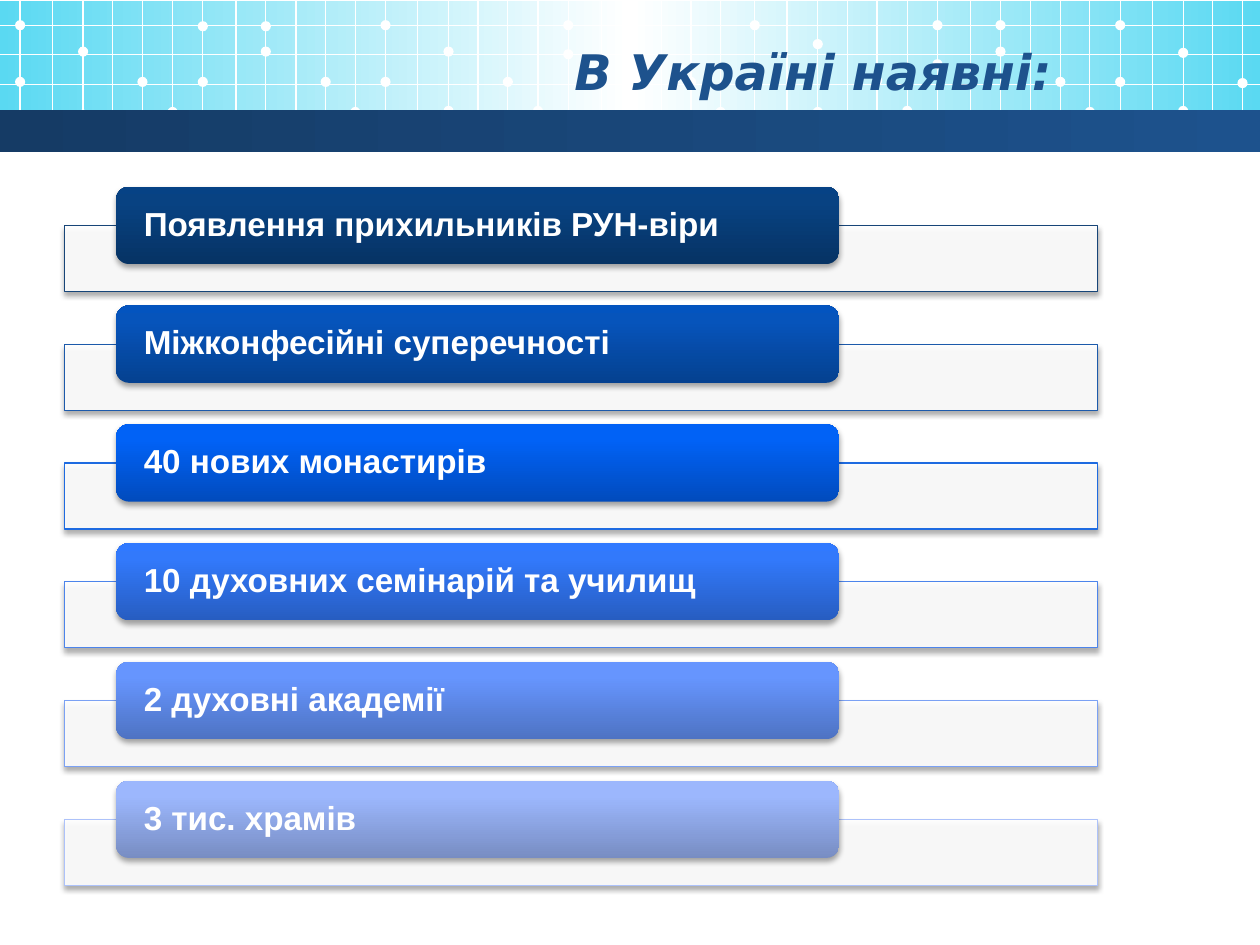
from lxml import etree
from pptx import Presentation
from pptx.dml.color import RGBColor
from pptx.enum.shapes import MSO_CONNECTOR as CONNECTOR, MSO_SHAPE as SHAPE
from pptx.enum.text import MSO_ANCHOR as ANCHOR, PP_ALIGN as ALIGN
from pptx.oxml.ns import qn
from pptx.util import Pt

TITLE = "В Україні наявні:"

# text, frame colour, gradient from bottom to top
ROWS = [
    ("Появлення прихильників РУН-віри", "174578", ("063364", "084282", "064285")),
    ("Міжконфесійні суперечності", "1C5AAB", ("054190", "0654BB", "0354BF")),
    ("40 нових монастирів", "1E6BE1", ("014BBD", "0162F6", "0062F8")),
    ("10 духовних семінарій та училищ", "4C84EB", ("275DC1", "3279FB", "3079FF")),
    ("2 духовні академії", "7BA1F4", ("4E73C3", "6695FE", "6696FF")),
    ("3 тис. храмів", "ADC2FA", ("788DC3", "9CB7FD", "9DB8FF")),
]

THEME = {
    "white": "FFFFFF",
    "sky": [(0, "5AD9F2"), (50, "FFFFFF"), (100, "5AD9F2")],
    "navy": [(0, "153B65"), (100, "1D528D")],
    "title": {"name": "DejaVu Sans", "size": Pt(28), "bold": True, "italic": True},
    "title_color": "1D528D",
    "row": {"name": "Arial", "size": Pt(19), "bold": True},
    "hairline": 0.75,
}

WIDTH, HEIGHT = 720, 540

# The header grid repeats a tile of twelve columns
TILE_STARTS = [11.5, 220.3, 431.3, 640.1]
TILE_COLUMNS = [0, 18.4, 36, 52.9, 69.9, 87.1, 104.4, 123.3, 140.4, 157.7, 174.6, 191.5]
COLUMNS = [x + dx for x in TILE_STARTS for dx in TILE_COLUMNS if x + dx < WIDTH]
LINES_Y = [14.4, 31, 48.2, 64.1]
GRID_BOTTOM = 79.2
DOT = 5.8
# column number: heights of the dot centres
DOTS = {
    0: (46.8, 14.4), 2: (29.5, 65.5), 4: (46.8,), 5: (64,), 6: (46.8, 15),
    8: (29.5, 15), 10: (46.8,), 11: (64,), 12: (46.8, 14.4), 14: (29.5, 63.4),
    16: (46.8,), 17: (63.4,), 18: (31, 14.4), 20: (30.2, 14.4), 22: (46.8,),
    23: (64,), 24: (47.5, 14.4), 26: (25.2, 64), 28: (46.1,), 29: (63.4,),
    30: (36.7, 14.4), 32: (29.5, 14.4), 34: (46.8,), 35: (64,),
    36: (46.8, 14.4), 38: (30.2, 63.4), 40: (47.5,),
}

FIRST_TOP, PITCH = 106.7, 67.87
PILL = {"left": 66.3, "width": 413.2, "height": 44.2}
FRAME = {"left": 36.9, "width": 590.4, "height": 37.8}


def rgb(value):
    return RGBColor.from_string(value)


def add_shape(shapes, kind, x, y, w, h, color=None):
    sp = shapes.add_shape(kind, Pt(x), Pt(y), Pt(w), Pt(h))
    sp.shadow.inherit = False
    sp.line.fill.background()
    if color:
        sp.fill.solid()
        sp.fill.fore_color.rgb = rgb(color)
    return sp


def add_line(shapes, x1, y1, x2, y2):
    line = shapes.add_connector(CONNECTOR.STRAIGHT, Pt(x1), Pt(y1), Pt(x2), Pt(y2))
    line.line.color.rgb = rgb(THEME["white"])
    line.line.width = Pt(THEME["hairline"])
    etree.SubElement(line.element.spPr, qn("a:effectLst"))


def set_gradient(sp, stops, angle=0):
    """Fill with any number of (percent, colour) stops; angle is counter-clockwise."""
    sp.fill.gradient()
    sp.fill.gradient_angle = angle
    stop_list = sp.element.spPr.find(".//" + qn("a:gsLst"))
    for old in list(stop_list):
        stop_list.remove(old)
    for percent, color in stops:
        stop = etree.SubElement(stop_list, qn("a:gs"), pos=str(percent * 1000))
        etree.SubElement(stop, qn("a:srgbClr"), val=color)


def set_alpha(color, percent):
    etree.SubElement(color, qn("a:alpha"), val=str(percent * 1000))


def add_shadow(sp):
    effects = sp.element.spPr.find(qn("a:effectLst"))
    shadow = etree.SubElement(effects, qn("a:outerShdw"), blurRad=str(Pt(3.15)),
                              dist=str(Pt(1.81)), dir="5400000", rotWithShape="0")
    set_alpha(etree.SubElement(shadow, qn("a:srgbClr"), val="000000"), 35)


def write(sp, text, style, color, align, left, right):
    tf = sp.text_frame
    frame = {"word_wrap": True, "vertical_anchor": ANCHOR.MIDDLE, "margin_top": 0,
             "margin_bottom": 0, "margin_left": Pt(left), "margin_right": Pt(right)}
    for name, value in frame.items():
        setattr(tf, name, value)
    p = tf.paragraphs[0]
    p.alignment = align
    r = p.add_run()
    r.text = text
    for name, value in style.items():
        setattr(r.font, name, value)
    r.font.color.rgb = rgb(color)
    return p


def add_header(slide):
    sky = add_shape(slide.shapes, SHAPE.RECTANGLE, 0, 0.7, WIDTH, 73.4)
    set_gradient(sky, THEME["sky"])
    grid = slide.shapes.add_group_shape().shapes
    for x in COLUMNS:
        add_line(grid, x, 0, x, GRID_BOTTOM)
    for y in LINES_Y:
        add_line(grid, 0, y, WIDTH, y)
    for column, heights in DOTS.items():
        for y in heights:
            add_shape(grid, SHAPE.OVAL, COLUMNS[column] - DOT / 2, y - DOT / 2,
                      DOT, DOT, THEME["white"])
    band = add_shape(slide.shapes, SHAPE.RECTANGLE, 0, 63, WIDTH, 24)
    set_gradient(band, THEME["navy"])


def add_title(slide):
    title = slide.shapes.title
    box = {"left": 36, "top": 18, "width": 581.8, "height": 44.6}
    for name, value in box.items():
        setattr(title, name, Pt(value))
    title.element.getparent().append(title.element)  # in front of the header
    write(title, TITLE, THEME["title"], THEME["title_color"], ALIGN.RIGHT, 7.2, 17)


def add_row(shapes, top, text, frame_color, colors):
    frame = add_shape(shapes, SHAPE.RECTANGLE, FRAME["left"], top + PILL["height"] / 2,
                      FRAME["width"], FRAME["height"], THEME["white"])
    set_alpha(frame.element.spPr.find(qn("a:solidFill"))[0], 90)
    frame.line.color.rgb = rgb(frame_color)
    frame.line.width = Pt(THEME["hairline"])
    add_shadow(frame)

    pill = add_shape(shapes, SHAPE.ROUNDED_RECTANGLE, PILL["left"], top,
                     PILL["width"], PILL["height"])
    set_gradient(pill, zip((0, 80, 100), colors), angle=90)
    add_shadow(pill)
    p = write(pill, text, THEME["row"], THEME["white"], ALIGN.LEFT, 13.7, 13.7)
    p.line_spacing = 0.9


def main():
    prs = Presentation()
    prs.slide_width, prs.slide_height = Pt(WIDTH), Pt(HEIGHT)
    slide = prs.slides.add_slide(prs.slide_layouts[5])
    add_header(slide)
    add_title(slide)
    rows = slide.shapes.add_group_shape().shapes
    for i, row in enumerate(ROWS):
        add_row(rows, FIRST_TOP + i * PITCH, *row)
    prs.save("out.pptx")


if __name__ == "__main__":
    main()
